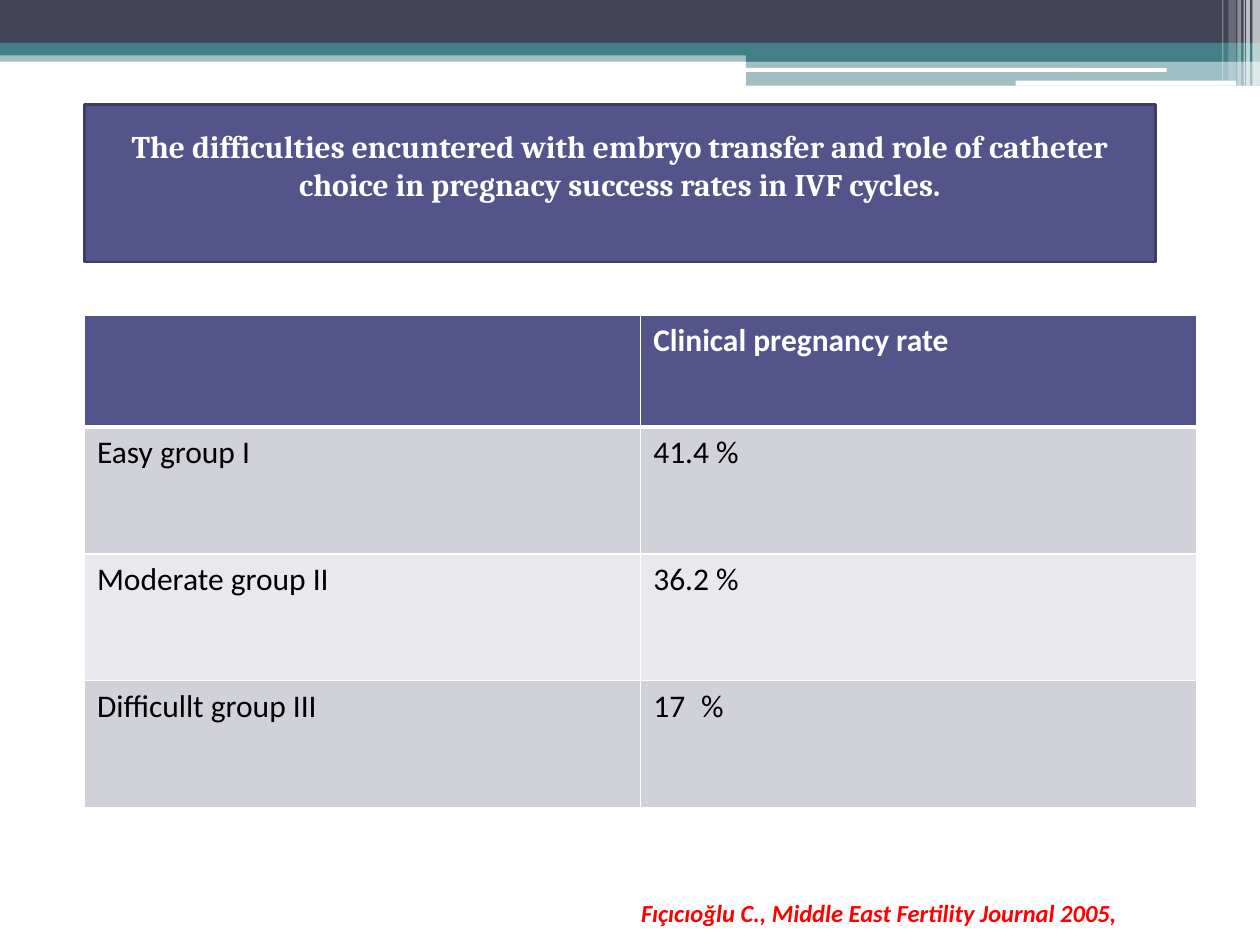
from dataclasses import dataclass

from lxml.etree import SubElement
from pptx import Presentation
from pptx.dml.color import RGBColor
from pptx.enum.shapes import MSO_SHAPE
from pptx.enum.text import MSO_ANCHOR, MSO_AUTO_SIZE, PP_ALIGN
from pptx.oxml import parse_xml
from pptx.oxml.ns import nsdecls, qn
from pptx.util import Inches, Pt


@dataclass(frozen=True)
class Theme:
    dark: str = "424456"
    teal: str = "438086"
    violet: str = "53548A"
    outline: str = "3D3E66"
    band: str = "D1D1DA"
    pale: str = "E9E9ED"
    white: str = "FFFFFF"
    black: str = "000000"
    red: str = "FF0000"
    head_font: str = "Cambria"
    body_font: str = "Calibri"
    text_size: int = 18
    source_size: int = 14


class Deck:
    COLS, ROWS = 100, 75

    def __init__(self, theme):
        self.theme = theme
        self.prs = Presentation()
        self.prs.slide_width, self.prs.slide_height = Inches(10), Inches(7.5)
        self.slide = self.prs.slides.add_slide(self.prs.slide_layouts[5])

    def box(self, col, row, cols, rows):
        x, y = self.prs.slide_width / self.COLS, self.prs.slide_height / self.ROWS
        return [round(v) for v in (col * x, row * y, cols * x, rows * y)]

    def run(self, p, text, color, font=None, size=None, bold=False, italic=False):
        r = p.add_run()
        r.text = text
        f = r.font
        f.name = font or self.theme.body_font
        f.size = Pt(size or self.theme.text_size)
        f.bold, f.italic = bold, italic
        f.color.rgb = RGBColor.from_string(color)

    def bar(self, grid, color, opacity=100, shape=MSO_SHAPE.RECTANGLE):
        sp = self.slide.shapes.add_shape(shape, *self.box(*grid))
        sp.shadow.inherit = False
        sp.line.fill.background()
        sp.fill.solid()
        sp.fill.fore_color.rgb = RGBColor.from_string(color)
        if opacity < 100:
            clr = sp.fill._xPr.find(qn("a:solidFill"))[0]
            SubElement(clr, qn("a:alpha"), val=str(opacity * 1000))

    def title(self, grid, text):
        t = self.theme
        sp = self.slide.shapes.title
        sp.left, sp.top, sp.width, sp.height = self.box(*grid)
        sp.fill.solid()
        sp.fill.fore_color.rgb = RGBColor.from_string(t.violet)
        sp.line.color.rgb = RGBColor.from_string(t.outline)
        sp.line.width = Pt(1.5)
        tf = sp.text_frame
        tf.word_wrap = True
        tf.auto_size = MSO_AUTO_SIZE.NONE
        tf.vertical_anchor = MSO_ANCHOR.MIDDLE
        tf.margin_bottom = Inches(0.34)
        p = tf.paragraphs[0]
        p.alignment = PP_ALIGN.CENTER
        self.run(p, text, t.white, t.head_font, bold=True)

    def text(self, grid, text):
        t = self.theme
        tf = self.slide.shapes.add_textbox(*self.box(*grid)).text_frame
        tf.word_wrap = True
        self.run(tf.paragraphs[0], text, t.red, size=t.source_size, bold=True, italic=True)

    def borders(self, cell, top, bottom):
        tcPr = cell._tc.get_or_add_tcPr()
        for i, (side, width) in enumerate(zip("LRTB", (1, 1, top, bottom))):
            tcPr.insert(i, parse_xml(
                f'<a:ln{side} {nsdecls("a")} w="{Pt(width)}"><a:solidFill>'
                f'<a:srgbClr val="{self.theme.white}"/></a:solidFill></a:ln{side}>'))

    def number(self, p, start):
        pPr = p._p.get_or_add_pPr()
        indent = Inches(0.38)
        pPr.set("marL", str(indent))
        pPr.set("indent", str(-indent))
        SubElement(pPr, qn("a:buFont"), typeface="+mj-lt")
        SubElement(pPr, qn("a:buAutoNum"), type="arabicPlain", startAt=str(start))

    def table(self, grid, rows, head_rows, numbered):
        t = self.theme
        frame = self.slide.shapes.add_table(len(rows), len(rows[0]), *self.box(*grid))
        tbl = frame.table
        body = (grid[3] - head_rows) / (len(rows) - 1)
        for i, values in enumerate(rows):
            tbl.rows[i].height = self.box(0, 0, 0, body if i else head_rows)[3]
            fill = (t.band if i % 2 else t.pale) if i else t.violet
            for j, value in enumerate(values):
                cell = tbl.cell(i, j)
                cell.fill.solid()
                cell.fill.fore_color.rgb = RGBColor.from_string(fill)
                self.borders(cell, 3 if i == 1 else 1, 1 if i else 3)
                p = cell.text_frame.paragraphs[0]
                if (i, j) in numbered:
                    self.number(p, numbered[i, j])
                if value:
                    self.run(p, value, t.black if i else t.white, bold=not i)


def main():
    theme = Theme()
    deck = Deck(theme)
    for grid, color, opacity in (
        ((0, 4, 100, 0.9), theme.teal, 50),
        ((0, 0, 100, 3.4), theme.dark, 100),
        ((0, 3.4, 100, 1), theme.teal, 100),
        ((59.2, 3.9, 40.8, 1), theme.teal, 100),
        ((59.2, 4.8, 40.8, 2), theme.teal, 50),
    ):
        deck.bar(grid, color, opacity)
    for grid in ((59.1, 5.4, 33.5, 0.3), (80.6, 6.4, 17.5, 0.4)):
        deck.bar(grid, theme.white, shape=MSO_SHAPE.ROUNDED_RECTANGLE)
    for col, cols, rows, opacity in (
        (99.4, 0.6, 6.8, 65),
        (98.9, 0.3, 6.8, 65),
        (98.7, 0.1, 6.8, 60),
        (98.2, 0.3, 6.8, 40),
        (97.5, 0.6, 6.4, 20),
        (97, 0.1, 6.4, 30),
    ):
        deck.bar((col, 0, cols, rows), theme.white, opacity)
    deck.table((6.7, 25, 88.3, 39.1), (
        ("", "Clinical pregnancy rate"),
        ("Easy group I", "41.4 %"),
        ("Moderate group II", "36.2 %"),
        ("Difficullt group III", "%"),
    ), head_rows=8.9, numbered={(3, 1): 17})
    deck.title((6.7, 8.3, 85, 12.5),
               "The difficulties encuntered with embryo transfer and role of "
               "catheter choice in pregnacy success rates in IVF cycles.")
    deck.text((49.9, 70.8, 50, 3.4), "Fıçıcıoğlu C., Middle East Fertility Journal 2005,")
    deck.prs.save("out.pptx")


if __name__ == "__main__":
    main()
